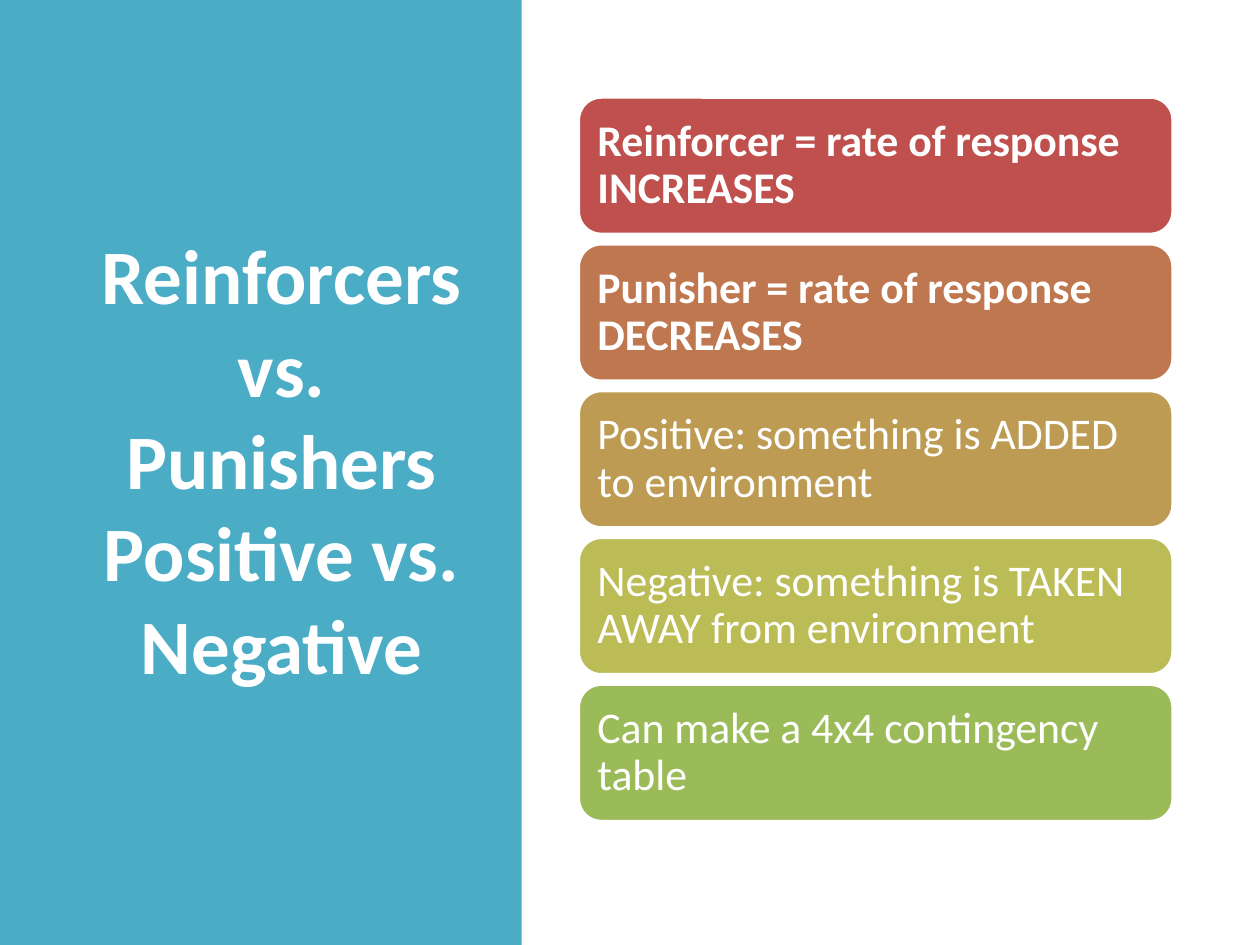
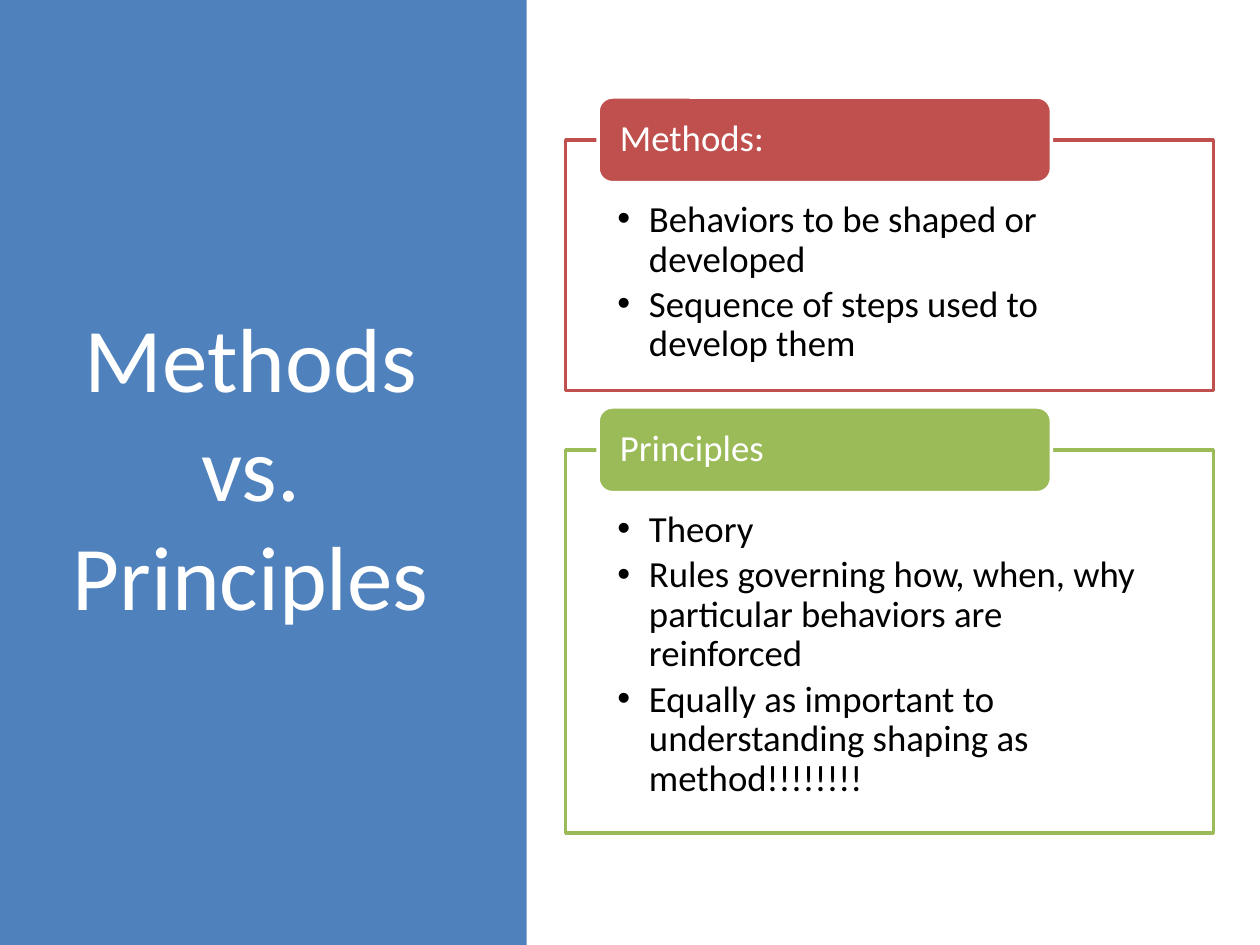
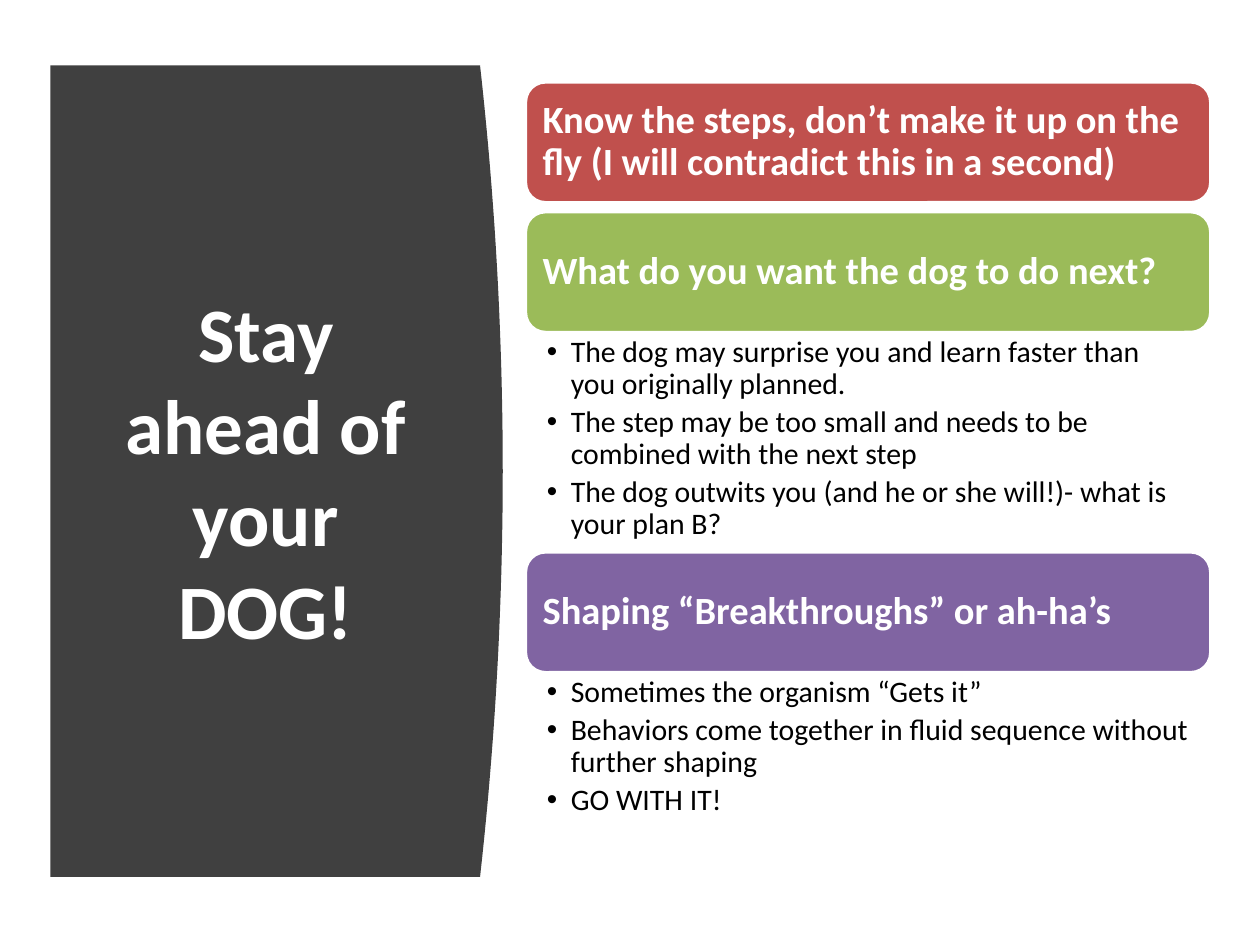
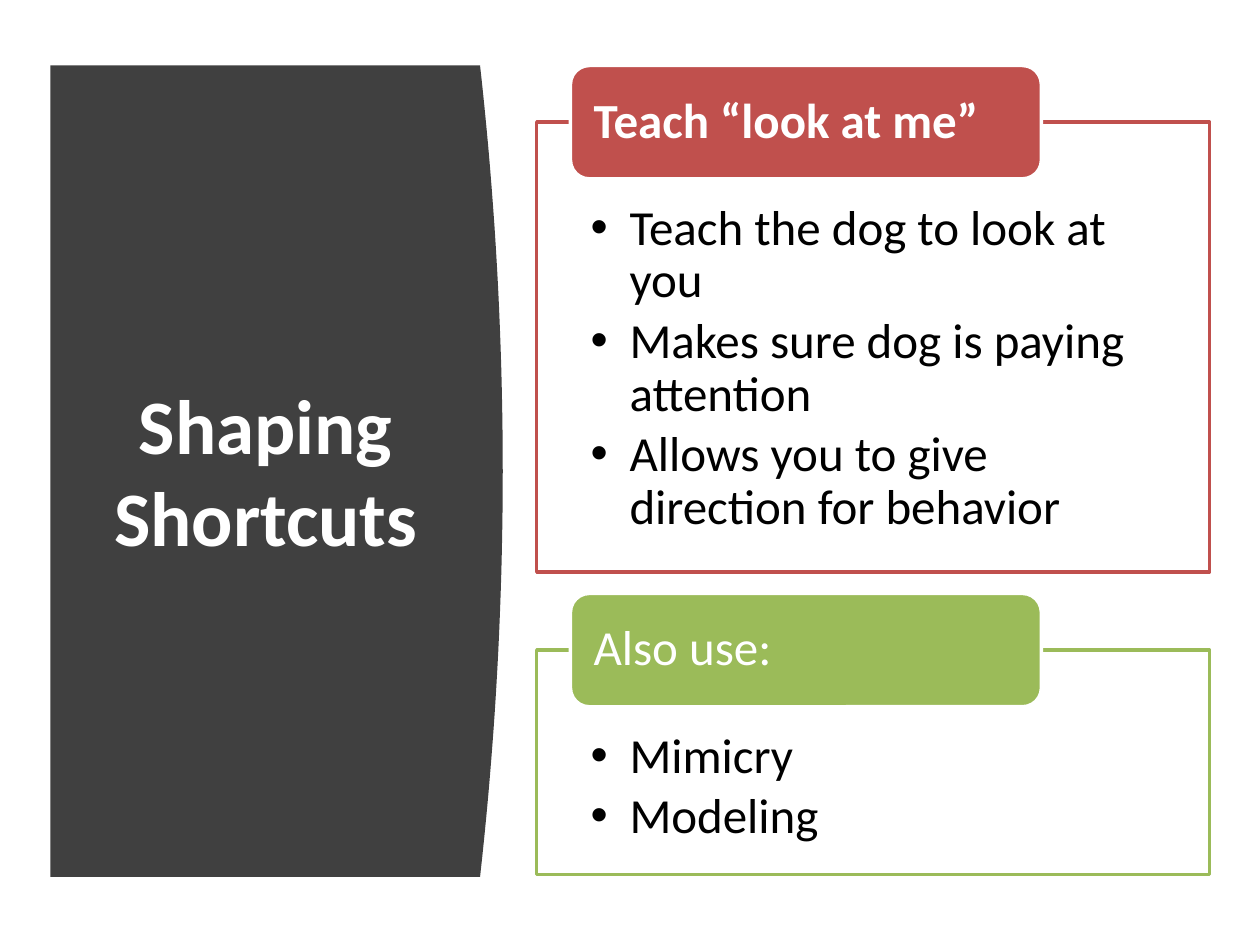
from lxml import etree
from pptx import Presentation
from pptx.dml.color import RGBColor
from pptx.enum.shapes import MSO_SHAPE
from pptx.enum.text import MSO_ANCHOR, MSO_AUTO_SIZE, PP_ALIGN
from pptx.oxml.ns import qn
from pptx.util import Inches, Pt

# Shared style
FONT = "Calibri"
WHITE = RGBColor(0xFF, 0xFF, 0xFF)
BLACK = RGBColor(0x00, 0x00, 0x00)
CHARCOAL = RGBColor(0x40, 0x40, 0x40)
TEAL = RGBColor(0x4B, 0xAC, 0xC6)
BLUE = RGBColor(0x4F, 0x81, 0xBD)
RED = RGBColor(0xC0, 0x50, 0x4D)
RUST = RGBColor(0xBF, 0x77, 0x50)
OCHRE = RGBColor(0xBD, 0x9B, 0x53)
OLIVE = RGBColor(0xBC, 0xBC, 0x56)
GREEN = RGBColor(0x9B, 0xBB, 0x59)
PURPLE = RGBColor(0x80, 0x64, 0xA2)
LINE_WIDTH = Pt(2)
TITLE_ONLY = 5


# Text helpers
def format_paragraph(paragraph, size, color, bold=False, align=PP_ALIGN.LEFT):
    paragraph.alignment = align
    font = paragraph.font
    font.name, font.size, font.bold = FONT, Pt(size), bold
    font.color.rgb = color


def set_frame(frame, insets, anchor):
    frame.word_wrap = True
    frame.auto_size = MSO_AUTO_SIZE.NONE
    frame.vertical_anchor = anchor
    (frame.margin_left, frame.margin_top,
     frame.margin_right, frame.margin_bottom) = map(Inches, insets)


def fill_bullets(frame, items, size, indent, space_share):
    for index, item in enumerate(items):
        paragraph = frame.paragraphs[0] if index == 0 else frame.add_paragraph()
        paragraph.text = item
        paragraph.level = 1
        paragraph.line_spacing = 0.9
        paragraph.space_before = Pt(0)
        paragraph.space_after = Pt(size * space_share)
        properties = paragraph._p.get_or_add_pPr()
        properties.set("marL", str(Inches(indent)))
        properties.set("indent", str(-Inches(indent)))
        etree.SubElement(properties, qn("a:buFont"), typeface="Arial")
        etree.SubElement(properties, qn("a:buChar"), char="•")
        format_paragraph(paragraph, size, BLACK)


# Shape helpers
def add_box(slide, kind, box, fill, line=None):
    shape = slide.shapes.add_shape(kind, *map(Inches, box))
    paint(shape, fill, line)
    return shape


def paint(shape, fill, line=None):
    shape.shadow.inherit = False
    shape.fill.solid()
    shape.fill.fore_color.rgb = fill
    if line is None:
        shape.line.fill.background()
    else:
        shape.line.color.rgb = line
        shape.line.width = LINE_WIDTH


def add_card(slide, box, text, fill, size, insets, bold=False):
    card = add_box(slide, MSO_SHAPE.ROUNDED_RECTANGLE, box, fill, WHITE)
    set_frame(card.text_frame, insets, MSO_ANCHOR.MIDDLE)
    paragraph = card.text_frame.paragraphs[0]
    paragraph.text = text
    paragraph.line_spacing = 0.9
    format_paragraph(paragraph, size, WHITE, bold)


# Title side of a slide
def add_titled_slide(presentation, text, box, size=44, bold=True):
    slide = presentation.slides.add_slide(presentation.slide_layouts[TITLE_ONLY])
    title = slide.shapes.title
    title.left, title.top, title.width, title.height = map(Inches, box)
    set_frame(title.text_frame, (0.1, 0.05, 0.1, 0.05), MSO_ANCHOR.MIDDLE)
    paragraph = title.text_frame.paragraphs[0]
    paragraph.text = text
    format_paragraph(paragraph, size, WHITE, bold, PP_ALIGN.CENTER)
    return slide


def add_flat_panel(slide, width, fill):
    panel = add_box(slide, MSO_SHAPE.RECTANGLE, (0, 0, width, 7.5), fill)
    slide.shapes.title.element.addprevious(panel.element)


def add_curved_panel(slide, box, bulge=0.18, steps=40):
    """Panel whose right edge swells out as a parabola."""
    left, top, width, height = box
    edge = left + width - bulge
    points = [(left, top)]
    for step in range(steps + 1):
        share = step / steps
        swell = bulge * (1 - (2 * share - 1) ** 2)
        points.append((edge + swell, top + height * share))
    points.append((left, top + height))
    start, *rest = [(Inches(x), Inches(y)) for x, y in points]
    builder = slide.shapes.build_freeform(*start, scale=1.0)
    builder.add_line_segments(rest, close=True)
    panel = builder.convert_to_shape()
    paint(panel, CHARCOAL)
    slide.shapes.title.element.addprevious(panel.element)


def add_curved_slide(presentation, text):
    slide = add_titled_slide(presentation, text, (0.71, 1.11, 2.8, 5.24))
    add_curved_panel(slide, (0.4, 0.52, 3.59, 6.44))
    return slide


# Content side: evenly spaced cards
def add_card_column(slide, box, cards, card_height):
    left, top, width, height = box
    pitch = (height - card_height) / (len(cards) - 1)
    for index, (text, fill, bold) in enumerate(cards):
        add_card(slide, (left, top + index * pitch, width, card_height),
                 text, fill, 25, (0.1,) * 4, bold)


# Content side: cards followed by bullet lists
def add_card_sections(slide, box, sections, card_height=0.96, gap=0.07):
    left, top, width = box
    for text, fill, items, list_height in sections:
        add_card(slide, (left, top, width, card_height),
                 text, fill, 22, (0.09,) * 4, bold=True)
        top += card_height
        if not items:
            top += gap
            continue
        bullets = slide.shapes.add_textbox(
            *map(Inches, (left, top, width, list_height)))
        set_frame(bullets.text_frame, (0.17, 0.03, 0.17, 0.03), MSO_ANCHOR.TOP)
        fill_bullets(bullets.text_frame, items, 17, 0.19, 0.2)
        top += list_height


# Content side: outlined lists, each with a tab across its top edge
def add_tabbed_lists(slide, box, sections, tab_height, gap, size, indent):
    left, top, width = box
    side = 0.08 * width
    insets = (side, 0.71 * tab_height, side, 0.24 * tab_height)
    for heading, color, bold, items, height in sections:
        frame_top = top + tab_height / 2
        outline = add_box(slide, MSO_SHAPE.RECTANGLE,
                          (left, frame_top, width, height), WHITE, color)
        white = outline.element.spPr.find(qn("a:solidFill"))[0]
        etree.SubElement(white, qn("a:alpha"), val="90000")
        set_frame(outline.text_frame, insets, MSO_ANCHOR.TOP)
        fill_bullets(outline.text_frame, items, size, indent, 0.15)
        tab_box = (left + 0.05 * width, top, 0.7 * width, tab_height)
        add_card(slide, tab_box, heading, color, size, (0.14, 0, 0.14, 0), bold)
        top = frame_top + height + gap


# Slides
def build_reinforcers(presentation):
    slide = add_titled_slide(
        presentation, "Reinforcers vs. Punishers\vPositive vs. Negative",
        (0.69, 0.68, 3.09, 5.92))
    add_flat_panel(slide, 4.14, TEAL)
    add_card_column(slide, (4.59, 0.77, 4.72, 5.75), [
        ("Reinforcer = rate of response INCREASES", RED, True),
        ("Punisher = rate of response DECREASES", RUST, True),
        ("Positive: something is ADDED to environment", OCHRE, False),
        ("Negative: something is TAKEN AWAY from environment", OLIVE, False),
        ("Can make a 4x4 contingency table", GREEN, False),
    ], card_height=1.09)


def build_methods(presentation):
    slide = add_titled_slide(presentation, "Methods vs. Principles",
                             (0.43, 0.68, 3.12, 6.02), size=52, bold=False)
    add_flat_panel(slide, 4.18, BLUE)
    add_tabbed_lists(slide, (4.49, 0.77, 5.14), [
        ("Methods:", RED, False,
         ["Behaviors to be shaped or developed",
          "Sequence of steps used to develop them"], 1.99),
        ("Principles", GREEN, False,
         ["Theory",
          "Rules governing how, when, why particular behaviors are reinforced",
          "Equally as important to understanding shaping as method!!!!!!!!"],
         3.04),
    ], tab_height=0.68, gap=0.13, size=21, indent=0.25)


def build_stay_ahead(presentation):
    slide = add_curved_slide(presentation, "Stay ahead of your DOG!")
    add_card_sections(slide, (4.17, 0.65, 5.44), [
        ("Know the steps, don’t make it up on the fly "
         "(I will contradict this in a second)", RED, [], 0),
        ("What do you want the dog to do next?", GREEN,
         ["The dog may surprise you and learn faster than you originally planned.",
          "The step may be too small and needs to be combined with the next step",
          "The dog outwits you (and he or she will!)- what is your plan B?"],
         1.74),
        ("Shaping “Breakthroughs” or ah-ha’s", PURPLE,
         ["Sometimes the organism “Gets it”",
          "Behaviors come together in fluid sequence without further shaping",
          "GO WITH IT!"], 1.22),
    ])


def build_shortcuts(presentation):
    slide = add_curved_slide(presentation, "Shaping Shortcuts")
    add_tabbed_lists(slide, (4.26, 0.52, 5.34), [
        ("Teach “look at me”", RED, True,
         ["Teach the dog to look at you",
          "Makes sure dog is paying attention",
          "Allows you to give direction for behavior"], 3.57),
        ("Also use:", GREEN, False, ["Mimicry", "Modeling"], 1.78),
    ], tab_height=0.9, gap=0.17, size=28, indent=0.31)


def main():
    presentation = Presentation()
    presentation.slide_width, presentation.slide_height = Inches(10), Inches(7.5)
    for build in (build_reinforcers, build_methods,
                  build_stay_ahead, build_shortcuts):
        build(presentation)
    presentation.save("out.pptx")


if __name__ == "__main__":
    main()
